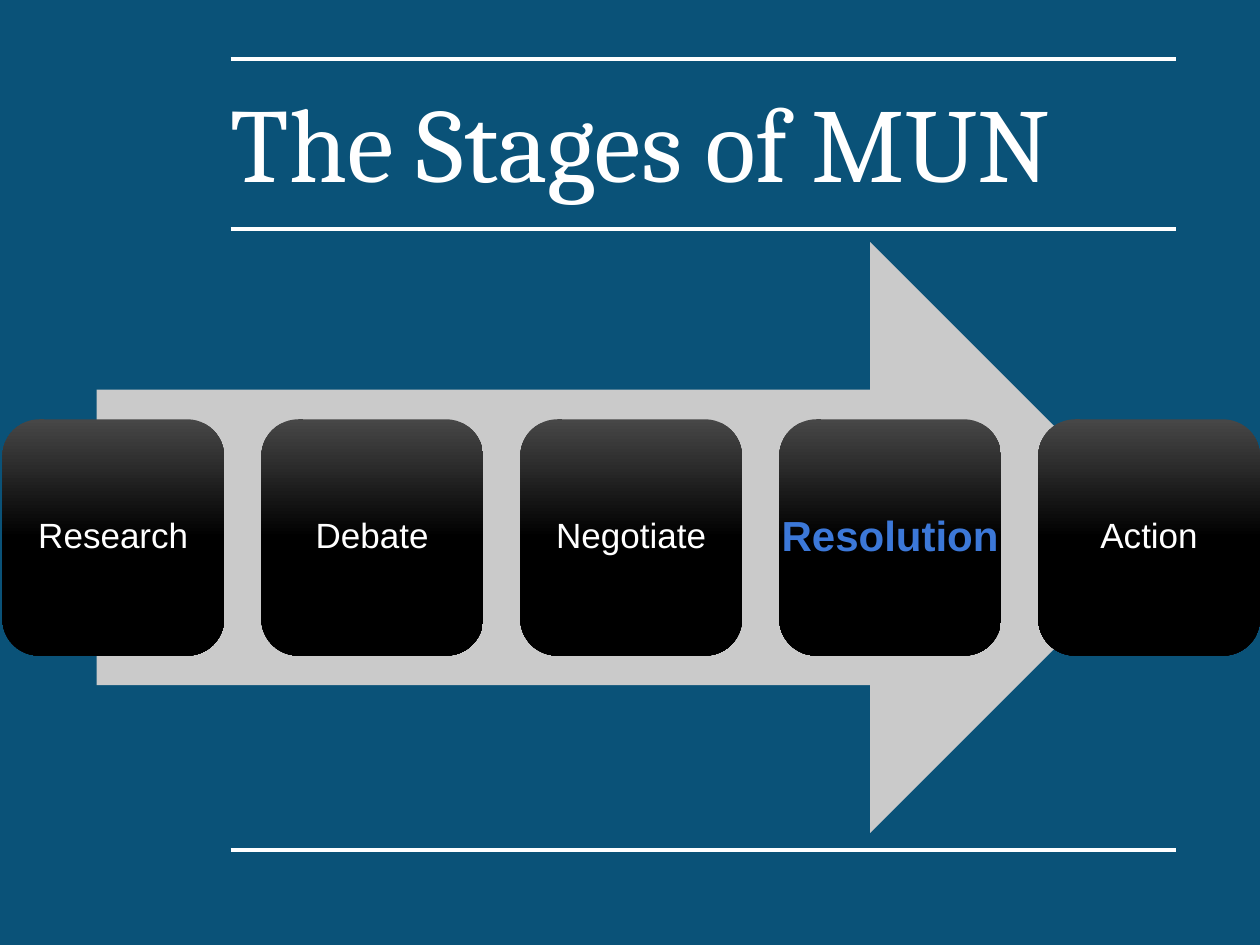
from lxml import etree
from pptx import Presentation
from pptx.dml.color import RGBColor
from pptx.enum.shapes import MSO_CONNECTOR, MSO_SHAPE as Shape
from pptx.enum.text import MSO_ANCHOR as Anchor, PP_ALIGN as Align
from pptx.oxml.ns import qn
from pptx.util import Cm, Pt

WHITE = "FFFFFF"
STAGES = ["Research", "Debate", "Negotiate", "Resolution", "Action"]
FOCUS = "Resolution"


def color(code):
    return RGBColor.from_string(code)


def add_text(slide, text, box, size=20, font="Arial", fill=WHITE,
             bold=False, align=Align.LEFT, inset=0, space=1.0):
    frame = slide.shapes.add_textbox(*map(Cm, box)).text_frame
    frame.word_wrap = True
    frame.vertical_anchor = Anchor.MIDDLE
    frame.margin_left = frame.margin_right = Cm(inset)
    frame.margin_top = frame.margin_bottom = Cm(inset)
    para = frame.paragraphs[0]
    para.alignment = align
    para.line_spacing = space
    run = para.add_run()
    run.text = text
    run.font.size = Pt(size)
    run.font.name = font
    run.font.bold = bold
    run.font.color.rgb = color(fill)


def add_shape(slide, kind, box):
    shape = slide.shapes.add_shape(kind, *map(Cm, box))
    shape.shadow.inherit = False
    shape.line.fill.background()
    return shape


def add_rule(slide, left, top, width):
    rule = slide.shapes.add_connector(
        MSO_CONNECTOR.STRAIGHT, Cm(left), Cm(top), Cm(left + width), Cm(top))
    rule.line.color.rgb = color(WHITE)
    rule.line.width = Pt(2)
    etree.SubElement(rule._element.spPr, qn("a:effectLst"))


def add_frame(slide, box):
    """Three rules: above the title, below it, and at the foot."""
    left, top, width, height = box
    for y in (top, top + 3.43, top + height):
        add_rule(slide, left, y, width)


def add_card(slide, label, box):
    left, top, width, height = box
    card = add_shape(slide, Shape.ROUNDED_RECTANGLE, box)
    card.adjustments[0] = 0.167

    # Dark sheen from the top edge down to the middle
    card.fill.gradient()
    card.fill.gradient_angle = 270
    for stop, (place, code) in zip(card.fill.gradient_stops,
                                   [(0, "474747"), (0.5, "000000")]):
        stop.position = place
        stop.color.rgb = color(code)

    # Label; the stage in focus is larger and reaches past the card
    focus = label == FOCUS
    style = dict(size=24, fill="3C78D8", bold=True) if focus else {}
    pad = -0.33 if focus else 0.22
    area = (left + pad, top + 0.22, width - 2 * pad, height - 0.44)
    add_text(slide, label, area, align=Align.CENTER, inset=0.2, space=0.9,
             **style)


def add_process(slide, box):
    left, top, width, height = box

    # Arrow behind the cards
    span = 0.85 * width
    arrow = add_shape(slide, Shape.RIGHT_ARROW,
                      (left + (width - span) / 2, top, span, height))
    arrow.fill.solid()
    arrow.fill.fore_color.rgb = color("CACACA")

    # Evenly spaced cards along the middle
    wide, tall = 4.47, 0.4 * height
    step = (width - wide) / (len(STAGES) - 1)
    for i, label in enumerate(STAGES):
        add_card(slide, label, (left + i * step, top + (height - tall) / 2,
                                wide, tall))


def main():
    deck = Presentation()
    deck.slide_width, deck.slide_height = Cm(25.4), Cm(19.05)
    slide = deck.slides.add_slide(deck.slide_layouts[6])
    back = slide.background.fill
    back.solid()
    back.fore_color.rgb = color("0A5278")

    add_frame(slide, (4.65, 1.19, 19.05, 15.95))
    add_text(slide, "The Stages of MUN", (4.65, 1.22, 19.05, 3.23),
             size=60, font="Cambria")
    add_process(slide, (0.05, 4.88, 25.35, 11.91))
    deck.save("out.pptx")


if __name__ == "__main__":
    main()
